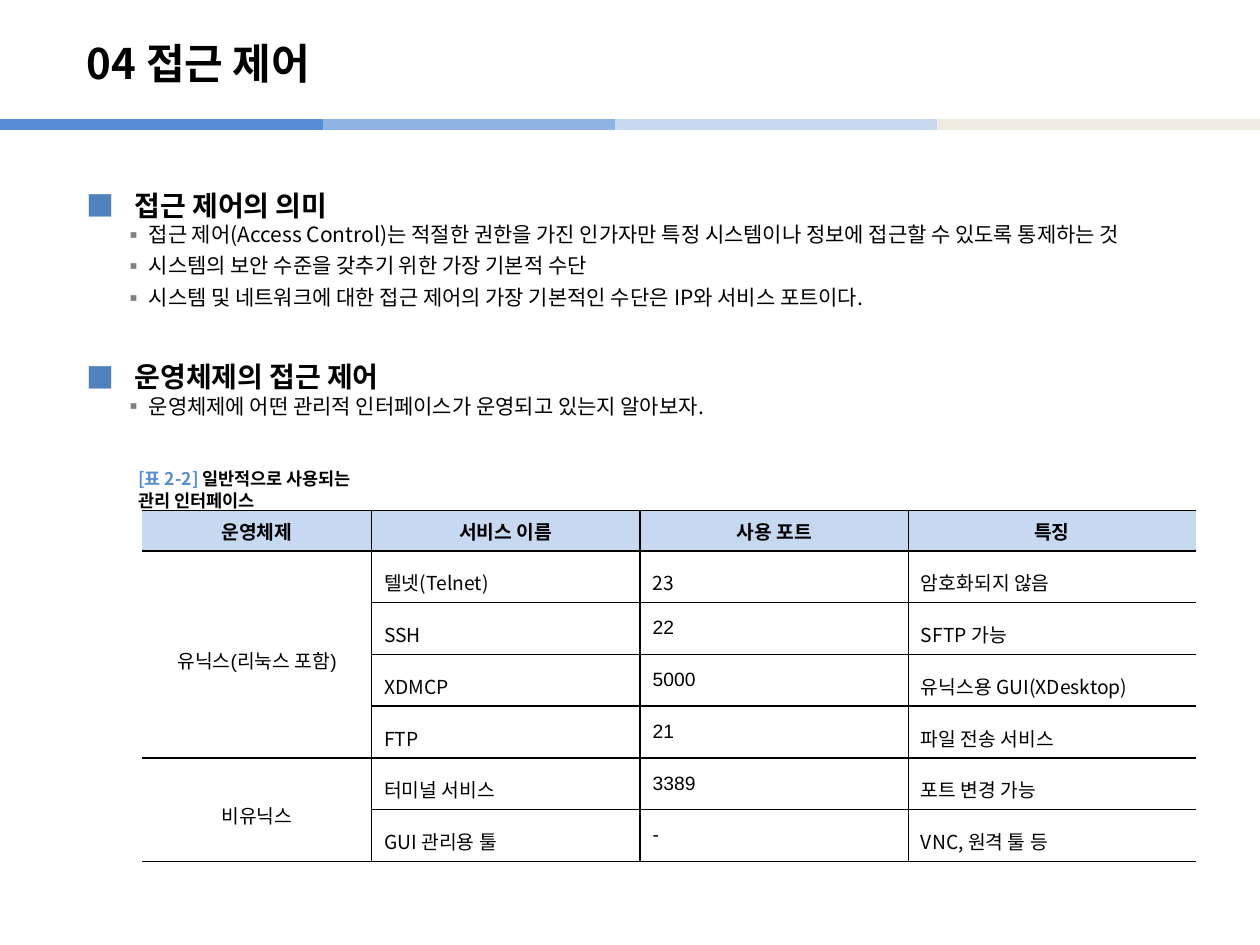
"""Build the access control slide with its bullets and interface table."""
from lxml.etree import SubElement
from pptx import Presentation
from pptx.dml.color import RGBColor
from pptx.enum.text import MSO_ANCHOR, MSO_AUTO_SIZE, PP_ALIGN
from pptx.oxml.ns import qn
from pptx.util import Inches, Pt

NOTO = "Noto Sans CJK KR"


def rgb(value):
    return RGBColor.from_string(value)


def write(p, text, size=11, color="000000", bold=False, font=NOTO, align=PP_ALIGN.LEFT, spacing=1.0):
    p.alignment, p.line_spacing = align, spacing
    r = p.add_run()
    r.text = text
    r.font.size, r.font.bold, r.font.name = Pt(size), bold, font
    r.font.color.rgb = rgb(color)
    SubElement(r.font._element, qn("a:ea"), typeface=NOTO)


prs = Presentation()
prs.slide_width, prs.slide_height = Inches(10), Inches(7.5)
s = prs.slides.add_slide(prs.slide_layouts[1])
W, H = prs.slide_width, prs.slide_height

bands = [(0.232, 0.488, "8EB4E3"), (0.488, 0.744, "C6D9F1"), (0.744, 1, "EEECE1"), (0, 0.256, "558ED5")]
for start, end, color in bands:
    y = int(H * 0.132)
    line = s.shapes.add_connector(1, int(W * start), y, int(W * end), y)
    line.line.color.rgb, line.line.width = rgb(color), Pt(6)
    SubElement(line._element.spPr, qn("a:effectLst"))

title, body = s.placeholders
title.left, title.top, title.width, title.height = [Inches(v) for v in (0.59, 0.2, 8.27, 0.6)]
title.text_frame.vertical_anchor = MSO_ANCHOR.MIDDLE
title.text_frame.auto_size = MSO_AUTO_SIZE.NONE
write(title.text_frame.paragraphs[0], "04 접근 제어", size=24, bold=True)

body.left, body.top, body.width, body.height = [Inches(v) for v in (0.59, 1.31, 9.21, 5.91)]
tf = body.text_frame
tf.auto_size = MSO_AUTO_SIZE.NONE
items = [
    (0, "접근 제어의 의미"),
    (1, "접근 제어(Access Control)는 적절한 권한을 가진 인가자만 특정 시스템이나 정보에 접근할 수 있도록 통제하는 것"),
    (1, "시스템의 보안 수준을 갖추기 위한 가장 기본적 수단"),
    (1, "시스템 및 네트워크에 대한 접근 제어의 가장 기본적인 수단은 IP와 서비스 포트이다."),
    (0, "운영체제의 접근 제어"),
    (1, "운영체제에 어떤 관리적 인터페이스가 운영되고 있는지 알아보자."),
]
levels = [
    dict(indent=(0.38, -0.38), bullet=("■", "4F81BD"), after=0, format=dict(size=16, bold=True, font="Arial", spacing=1.5)),
    dict(indent=(0.49, -0.2), bullet=("▪", "808080"), after=3.5, format=dict(size=12)),
]
for i, (level, text) in enumerate(items):
    p = tf.add_paragraph() if i else tf.paragraphs[0]
    look = levels[level]
    p.level = level
    p.space_before = Pt(15.5 if i and level == 0 else 0)
    p.space_after = Pt(look["after"])
    write(p, text, **look["format"])
    pPr = p._p.get_or_add_pPr()
    margin, indent = look["indent"]
    pPr.set("marL", str(Inches(margin)))
    pPr.set("indent", str(Inches(indent)))
    char, color = look["bullet"]
    SubElement(SubElement(pPr, qn("a:buClr")), qn("a:srgbClr"), val=color)
    SubElement(pPr, qn("a:buFont"), typeface=NOTO)
    SubElement(pPr, qn("a:buChar"), char=char)

rows = [
    ("운영체제", "서비스 이름", "사용 포트", "특징"),
    ("유닉스(리눅스 포함)", "텔넷(Telnet)", "23", "암호화되지 않음"),
    ("", "SSH", "22", "SFTP 가능"),
    ("", "XDMCP", "5000", "유닉스용 GUI(XDesktop)"),
    ("", "FTP", "21", "파일 전송 서비스"),
    ("비유닉스", "터미널 서비스", "3389", "포트 변경 가능"),
    ("", "GUI 관리용 툴", "-", "VNC, 원격 툴 등"),
]
widths = [1.82, 2.13, 2.13, 2.28]
heights = [0.32] + [0.41] * 6
frame = s.shapes.add_table(len(rows), len(widths), Inches(1.13), Inches(4.05), Inches(sum(widths)), Inches(sum(heights)))
table = frame.table
table.horz_banding = table.first_row = False
for column, width in zip(table.columns, widths):
    column.width = Inches(width)
for row, height in zip(table.rows, heights):
    row.height = Inches(height)
for top, bottom in ((1, 4), (5, 6)):
    table.cell(top, 0).merge(table.cell(bottom, 0))

for i, row in enumerate(rows):
    for j, text in enumerate(row):
        cell = table.cell(i, j)
        tcPr = cell._tc.get_or_add_tcPr()
        for side, drawn in (("L", j > 0), ("R", j < 3), ("T", True), ("B", True)):
            ln = SubElement(tcPr, qn(f"a:ln{side}"), w=str(Pt(1)))
            fill = SubElement(ln, qn("a:solidFill" if drawn else "a:noFill"))
            if drawn:
                SubElement(fill, qn("a:srgbClr"), val="000000")
        cell.fill.solid()
        cell.fill.fore_color.rgb = rgb("FFFFFF" if i else "C6D9F1")
        if not text:
            continue
        if i and j == 0:
            cell.vertical_anchor = MSO_ANCHOR.MIDDLE
        arial = i == 0 or j == 0 or (j == 2 and i > 1)
        write(cell.text_frame.paragraphs[0], text, bold=i == 0, font="Arial" if arial else NOTO,
              align=PP_ALIGN.CENTER if i == 0 or j == 0 else PP_ALIGN.LEFT, spacing=1.4 if i else 1.0)

caption = s.shapes.add_textbox(Inches(1), Inches(3.73), Inches(2.09), Inches(0.31))
tf = caption.text_frame
tf.word_wrap, tf.vertical_anchor = False, MSO_ANCHOR.MIDDLE
p = tf.paragraphs[0]
write(p, "[표 2-2] ", size=10, color="558ED5", bold=True)
write(p, "일반적으로 사용되는 관리 인터페이스", size=10, bold=True)

prs.save("out.pptx")
